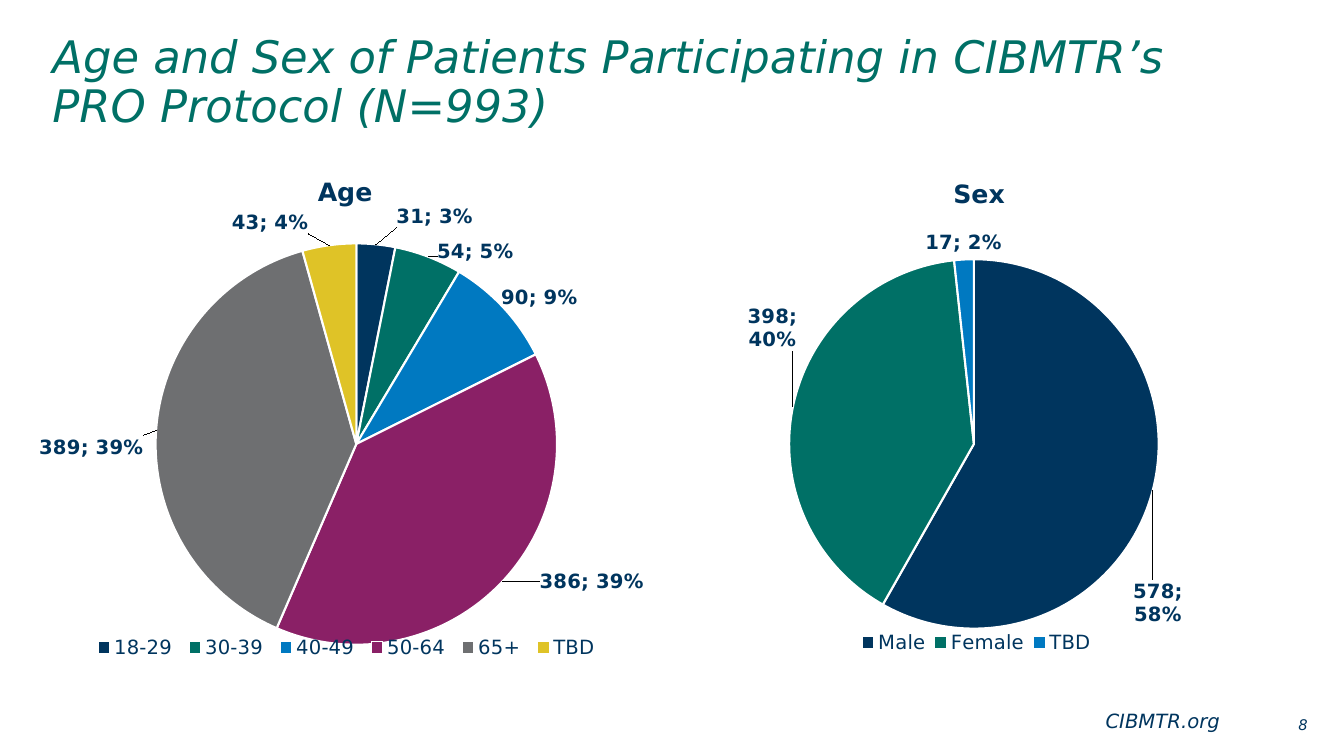
from lxml import etree
from pptx import Presentation
from pptx.chart.data import CategoryChartData
from pptx.dml.color import RGBColor
from pptx.enum import chart as charts, text
from pptx.oxml.ns import qn
from pptx.util import Inches, Pt

FONT = "DejaVu Sans"
NAVY, GREEN = "00355E", "007066"
PALETTE = [NAVY, GREEN, "0079C1", "8A2066", "6E6F71", "DFC327"]

# Content: text, box, then format
TEXTS = [
    ("Age and Sex of Patients Participating in CIBMTR’s\vPRO Protocol (N=993)",
     (0.52, 0.35, 12.28, 0.97),
     dict(size=32, color=GREEN, align="LEFT", anchor="TOP", wrap=True, spacing=0.9)),
    ("CIBMTR.org", (10.15, 7.03, 1.95, 0.24),
     dict(size=14, color=NAVY, align="RIGHT", anchor="BOTTOM", wrap=True, spacing=1)),
    ("8", (12.72, 7.1, 0.25, 0.18),
     dict(size=10.5, color=NAVY, align="RIGHT", anchor="MIDDLE", wrap=False, spacing=1)),
]

# Layouts are fractions of the chart; label shifts are fractions by slice
PIES = [
    dict(title="Age", box=(0.08, 1.42, 6.58, 5.53),
         counts={"18-29": 31, "30-39": 54, "40-49": 90,
                 "50-64": 386, "65+": 389, "TBD": 43},
         title_at=(0.46, 0.05), plot_at=(0.22, 0.18, 0.61, 0.72),
         legend_at=(0.12, 0.88, 0.78, 0.05),
         shifts=[(0.03, -0.02), (0.01, 0.02), (-0.01, 0.01),
                 (0.05, -0.03), (-0.01, 0.03), (-0.03, -0.01)]),
    dict(title="Sex", box=(7.16, 1.44, 5, 5.39),
         counts={"Male": 578, "Female": 398, "TBD": 17},
         title_at=(0.45, 0.05), plot_at=(0.13, 0.21, 0.74, 0.68),
         legend_at=(0.26, 0.89, 0.49, 0.05),
         shifts=[(-0.05, 0.16), (0.02, -0.1), (0, 0)]),
]


def color(value):
    return RGBColor.from_string(value)


def set_font(font, size, value=NAVY, **styles):
    formats = dict(name=FONT, size=Pt(size), bold=False, italic=False) | styles
    for key, setting in formats.items():
        setattr(font, key, setting)
    font.color.rgb = color(value)


def add(parent, tag, value):
    etree.SubElement(parent, qn(f"c:{tag}")).set("val", str(value))


def manual_layout(place, inner=False, edge=True):
    layout = etree.Element(qn("c:layout"))
    manual = etree.SubElement(layout, qn("c:manualLayout"))
    if inner:
        add(manual, "layoutTarget", "inner")
    if edge:
        add(manual, "xMode", "edge")
        add(manual, "yMode", "edge")
    for tag, value in zip("xywh", place):
        add(manual, tag, value)
    return layout


def place_after(parent, tag, layout):
    for old in parent.findall(qn("c:layout")):
        parent.remove(old)
    parent.find(qn(f"c:{tag}")).addnext(layout)


def show_percent(labels):
    labels.find(qn("c:showPercent")).set("val", "1")
    separator = etree.Element(qn("c:separator"))
    separator.text = "; "
    labels.find(qn("c:showBubbleSize")).addnext(separator)


def add_text(slide, words, box, style):
    frame = slide.shapes.add_textbox(*map(Inches, box)).text_frame
    margins = {f"margin_{side}": 0 for side in ("left", "top", "right", "bottom")}
    formats = margins | dict(word_wrap=style["wrap"],
                             vertical_anchor=text.MSO_ANCHOR[style["anchor"]])
    for key, setting in formats.items():
        setattr(frame, key, setting)
    line = frame.paragraphs[0]
    line.text = words
    line.alignment = text.PP_ALIGN[style["align"]]
    line.line_spacing = style["spacing"]
    for run in line.runs:
        set_font(run.font, style["size"], style["color"], italic=True)


def add_pie(slide, pie):
    data = CategoryChartData()
    data.categories = pie["counts"].keys()
    data.add_series("Series 1", pie["counts"].values())
    chart = slide.shapes.add_chart(charts.XL_CHART_TYPE.PIE,
                                   *map(Inches, pie["box"]), data).chart
    set_font(chart.font, 10, "000000")

    # Title and legend
    heading = chart.chart_title.text_frame
    heading.text = pie["title"]
    set_font(heading.paragraphs[0].runs[0].font, 18, bold=True)
    chart.has_legend = True
    chart.legend.position = charts.XL_LEGEND_POSITION.BOTTOM
    chart.legend.include_in_layout = False
    set_font(chart.legend.font, 14)

    # Slices and their labels
    plot = chart.plots[0]
    plot.vary_by_categories = True
    series = plot.series[0]
    labels = series.data_labels
    labels.show_value = labels.show_percentage = True
    labels.position = charts.XL_LABEL_POSITION.OUTSIDE_END
    set_font(labels.font, 14, bold=True)
    for i, fill in enumerate(PALETTE[:len(pie["counts"])]):
        point = series.points[i]
        point.format.fill.solid()
        point.format.fill.fore_color.rgb = color(fill)
        point.format.line.color.rgb = color("FFFFFF")
        point.format.line.width = Pt(1.5)
        set_font(point.data_label.font, 14, bold=True)
        point.data_label.position = charts.XL_LABEL_POSITION.OUTSIDE_END

    # Positions within the chart
    root = chart.element
    for label, shift in zip(list(root.iter(qn("c:dLbl"))), pie["shifts"]):
        show_percent(label)
        if any(shift):
            place_after(label, "idx", manual_layout(shift, edge=False))
    show_percent(next(root.iter(qn("c:dLbls"))))
    place_after(next(root.iter(qn("c:title"))), "tx", manual_layout(pie["title_at"]))
    place_after(next(root.iter(qn("c:legend"))), "legendPos",
                manual_layout(pie["legend_at"]))
    area = next(root.iter(qn("c:plotArea")))
    for old in area.findall(qn("c:layout")):
        area.remove(old)
    area.insert(0, manual_layout(pie["plot_at"], inner=True))


def main():
    deck = Presentation()
    deck.slide_width, deck.slide_height = Inches(13.33), Inches(7.5)
    slide = deck.slides.add_slide(deck.slide_layouts[6])
    for words, box, style in TEXTS:
        add_text(slide, words, box, style)
    for pie in PIES:
        add_pie(slide, pie)
    deck.save("out.pptx")


if __name__ == "__main__":
    main()
